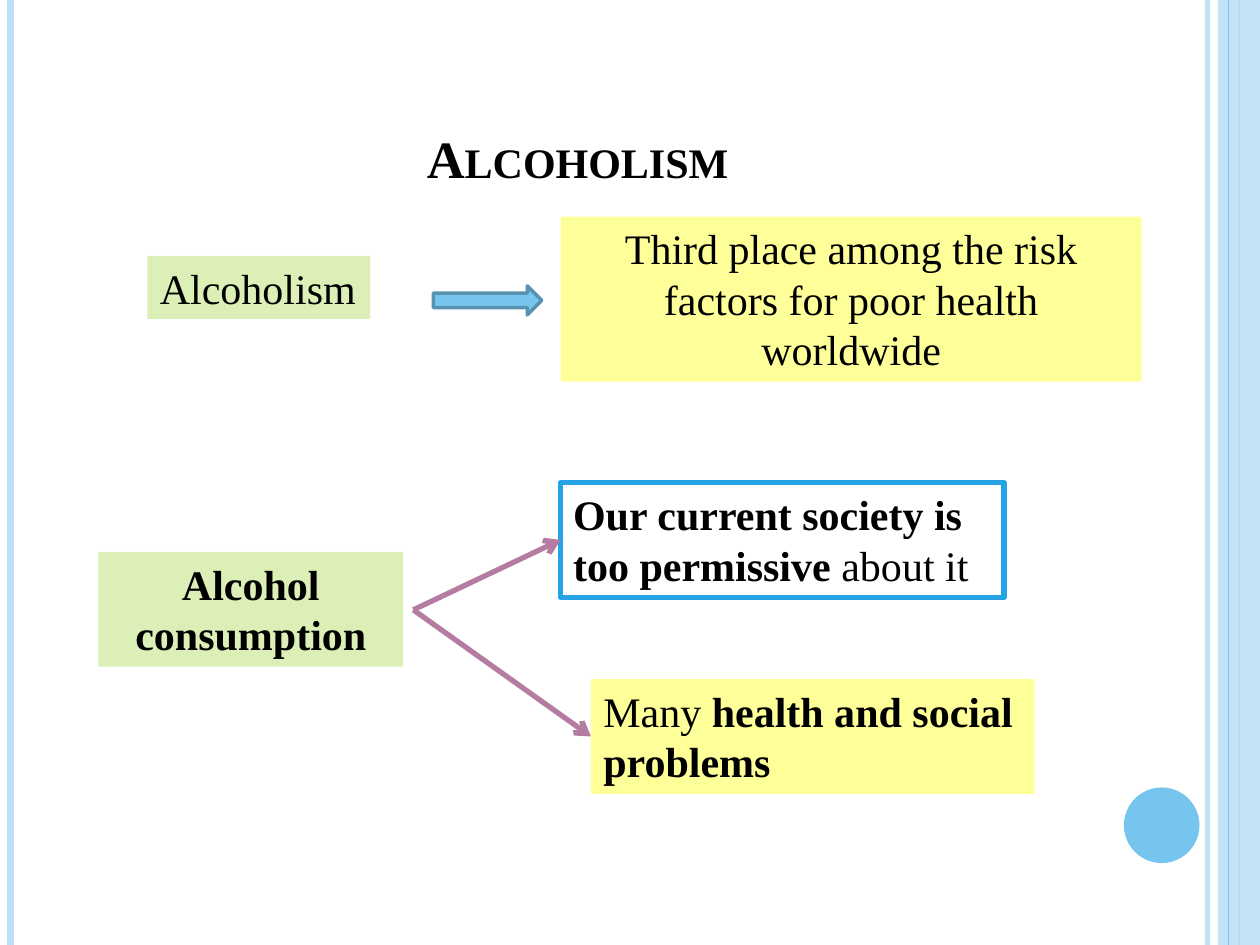
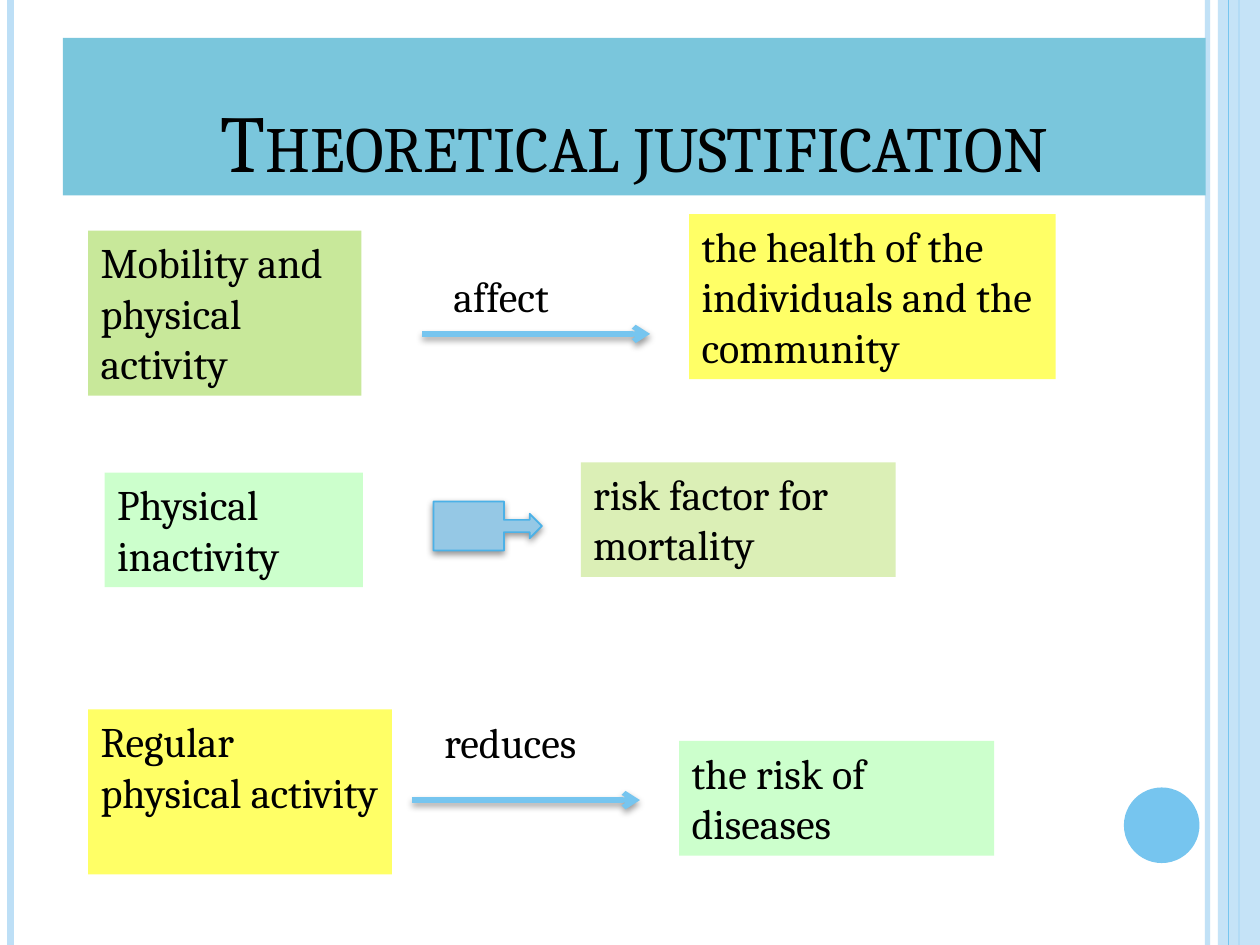
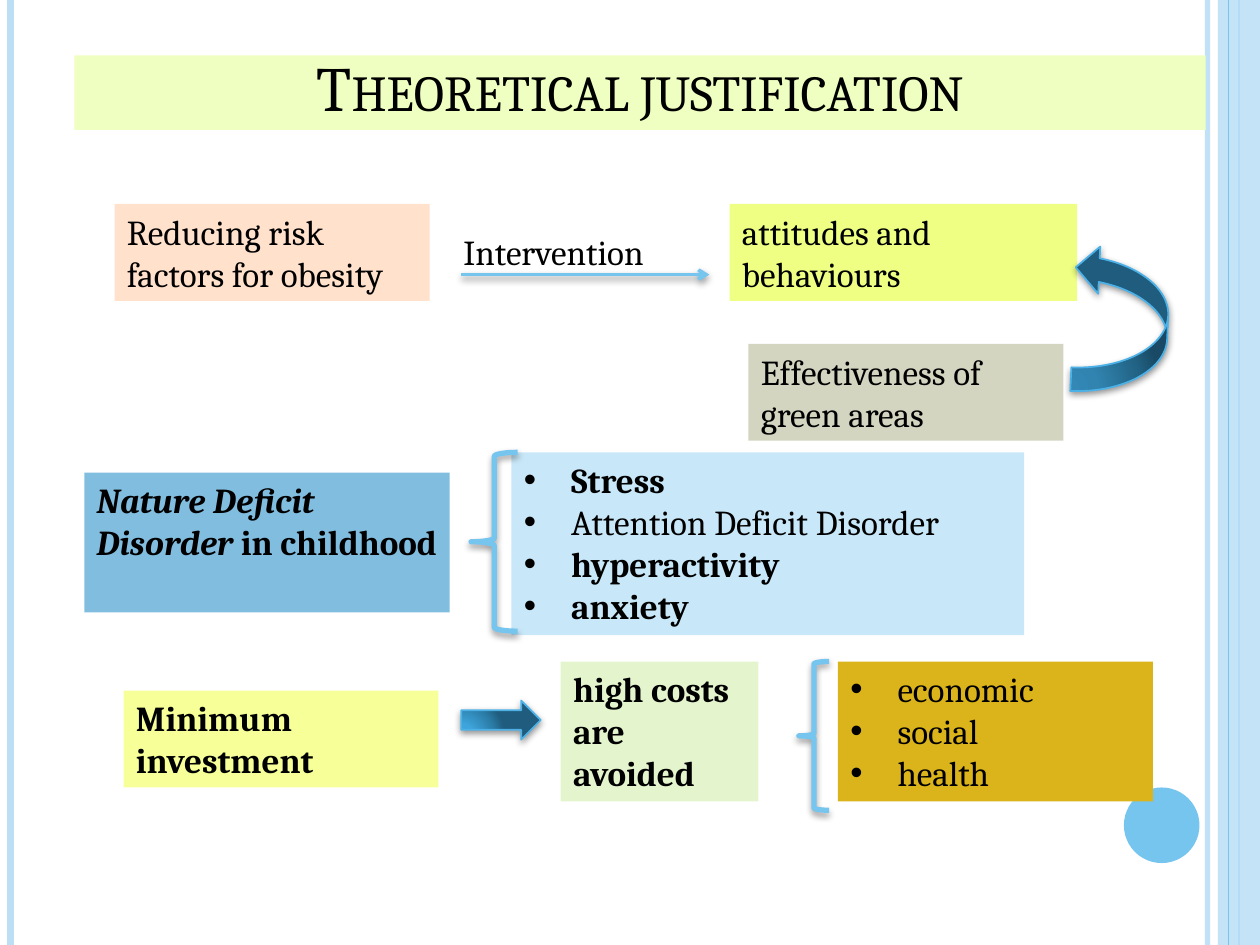
from dataclasses import dataclass

from lxml.etree import SubElement
from pptx import Presentation
from pptx.dml.color import RGBColor
from pptx.enum.shapes import MSO_CONNECTOR, MSO_SHAPE as Kind
from pptx.enum.text import MSO_ANCHOR as Anchor, PP_ALIGN as Align
from pptx.oxml import parse_xml
from pptx.oxml.ns import nsdecls, qn
from pptx.util import Pt

BLACK = RGBColor(0x00, 0x00, 0x00)
WHITE = RGBColor(0xFF, 0xFF, 0xFF)
PALE_BLUE = RGBColor(0xBD, 0xDF, 0xF6)
SKY = RGBColor(0x76, 0xC5, 0xEF)
STEEL = RGBColor(0x57, 0x92, 0xB1)
EDGE_BLUE = RGBColor(0x4B, 0xB1, 0xE7)
BRIGHT_BLUE = RGBColor(0x26, 0xA3, 0xE6)
CALLOUT_BLUE = RGBColor(0x95, 0xC8, 0xE5)
TITLE_BLUE = RGBColor(0x7A, 0xC6, 0xDC)
TITLE_LIME = RGBColor(0xEF, 0xFF, 0xC1)
NATURE_BLUE = RGBColor(0x80, 0xBD, 0xDF)
LIST_BLUE = RGBColor(0xC8, 0xE8, 0xF9)
MAUVE = RGBColor(0xB4, 0x7C, 0xA0)
SAGE = RGBColor(0xDB, 0xEF, 0xB6)
LEAF = RGBColor(0xC8, 0xE8, 0x9A)
MINT = RGBColor(0xCC, 0xFF, 0xCC)
PALE_GREEN = RGBColor(0xE4, 0xF4, 0xCD)
CREAM = RGBColor(0xFF, 0xFF, 0x99)
YELLOW = RGBColor(0xFF, 0xFF, 0x66)
LIME = RGBColor(0xEE, 0xFF, 0x83)
LEMON = RGBColor(0xF6, 0xFF, 0x98)
PEACH = RGBColor(0xFF, 0xE1, 0xCC)
STONE = RGBColor(0xD3, 0xD5, 0xC1)
GOLD = RGBColor(0xDB, 0xB3, 0x1B)
DEEP_BLUES = ((0, "40ABE4"), (30, "3EA5DC"), (75, "2B7DA8"), (100, "205C7D"))

PAGE_WIDTH, PAGE_HEIGHT = 720, 540
BULLET_INDENT = 27


@dataclass(frozen=True)
class Box:
    """A rectangle in points."""
    left: float
    top: float
    width: float
    height: float

    def inner(self, across, down, width, height):
        """Return a box placed from this one's top left corner."""
        return Box(self.left + across, self.top + down, width, height)

    def lengths(self):
        """Return the four lengths for python-pptx."""
        return [Pt(value) for value in (self.left, self.top, self.width, self.height)]


@dataclass(frozen=True)
class Face:
    """A font name with its size in points."""
    name: str
    size: float


TIMES_TITLE, TIMES_BODY = Face("Times New Roman", 30), Face("Times New Roman", 24)
CAMBRIA_TITLE, CAMBRIA_BAND = Face("Cambria", 46), Face("Cambria", 36)
CAMBRIA_BODY, CAMBRIA_SMALL = Face("Cambria", 24), Face("Cambria", 20)


def fade(shape, opacity):
    """Make every colour of a shape partly transparent."""
    for colour in shape.element.iter(qn("a:srgbClr")):
        SubElement(colour, qn("a:alpha")).set("val", str(opacity * 1000))


def cast_shadow(shape, opacity=40, distance=2):
    """Drop a soft black shadow below a shape."""
    effects = shape.element.spPr.find(qn("a:effectLst"))
    effects.append(parse_xml(
        f'<a:outerShdw {nsdecls("a")} blurRad="{Pt(4)}" dist="{Pt(distance)}" '
        f'dir="5400000" rotWithShape="0"><a:srgbClr val="000000">'
        f'<a:alpha val="{opacity * 1000}"/></a:srgbClr></a:outerShdw>'))


def shade_radially(shape):
    """Fill a shape with the deep blue radial gradient."""
    stops = "".join(f'<a:gs pos="{place * 1000}"><a:srgbClr val="{colour}"/></a:gs>'
                    for place, colour in DEEP_BLUES)
    shape.fill.gradient()
    properties = shape.element.spPr
    properties.replace(properties.find(qn("a:gradFill")), parse_xml(
        f'<a:gradFill {nsdecls("a")} rotWithShape="1"><a:gsLst>{stops}</a:gsLst>'
        '<a:path path="circle"><a:fillToRect l="5000" t="100000" r="120000" b="10000"/>'
        '</a:path></a:gradFill>'))


def add_figure(page, kind, box, fill=None, line=None, weight=1):
    """Add a preset shape with the given fill and outline."""
    shape = page.shapes.add_shape(kind, *box.lengths())
    shape.shadow.inherit = False
    if fill is None:
        shape.fill.background()
    else:
        shape.fill.solid()
        shape.fill.fore_color.rgb = fill
    if line is None:
        shape.line.fill.background()
    else:
        shape.line.color.rgb = line
        shape.line.width = Pt(weight)
    return shape


def add_line(page, start, end, colour, weight, arrow=False):
    """Add a straight line between two points, with an arrowhead if asked."""
    line = page.shapes.add_connector(
        MSO_CONNECTOR.STRAIGHT, *[Pt(value) for value in (*start, *end)])
    line.line.color.rgb = colour
    line.line.width = Pt(weight)
    properties = line.element.spPr
    SubElement(properties, qn("a:effectLst"))
    if arrow:
        SubElement(properties.find(qn("a:ln")), qn("a:tailEnd")).set("type", "arrow")
    return line


def format_span(span, face, bold=False, italic=False):
    """Give a run its font."""
    span.font.name, span.font.size = face.name, Pt(face.size)
    span.font.bold, span.font.italic = bold, italic
    span.font.color.rgb = BLACK


def add_span(para, text, face, bold=False):
    """Continue a paragraph with a run of another weight."""
    span = para.add_run()
    span.text = text
    format_span(span, face, bold)


def write(shape, text, face, align=Align.LEFT, anchor=Anchor.TOP,
          bold=False, italic=False, wrap=True):
    """Set a shape's text and return its paragraphs."""
    frame = shape.text_frame
    frame.text = text
    frame.word_wrap = wrap
    frame.vertical_anchor = anchor
    for para in frame.paragraphs:
        para.alignment = align
        for span in para.runs:
            format_span(span, face, bold, italic)
    return frame.paragraphs


def add_panel(page, box, fill, text, face, line=None, weight=3, **style):
    """Add a filled text panel and return its paragraphs."""
    shape = add_figure(page, Kind.RECTANGLE, box, fill, line, weight)
    return write(shape, text, face, **style)


def add_list(page, box, fill, items, face, bold=False):
    """Add a panel of bulleted items and return its paragraphs."""
    shape = add_figure(page, Kind.RECTANGLE, box, fill)
    paras = write(shape, "\n".join(items), face, bold=bold)
    for properties in shape.element.iter(qn("a:pPr")):
        properties.set("marL", str(Pt(BULLET_INDENT)))
        properties.set("indent", str(-Pt(BULLET_INDENT)))
        SubElement(properties, qn("a:buFont")).set("typeface", "Arial")
        SubElement(properties, qn("a:buChar")).set("char", "•")
    return paras


def add_title(page, box, text, face, fill=None, bold=False):
    """Add the small-caps title at the foot of its band."""
    shape = add_figure(page, Kind.RECTANGLE, box, fill)
    write(shape, text, face, Align.CENTER, Anchor.BOTTOM, bold)
    for properties in shape.element.iter(qn("a:rPr")):
        properties.set("cap", "small")


def add_labelled_arrow(page, box, label, indent, label_box, face, weight=3):
    """Add an arrow along the foot of a box with a label at its top."""
    foot = box.top + box.height
    cast_shadow(add_line(page, (box.left, foot), (box.left + box.width, foot),
                         SKY, weight, arrow=True))
    text_box = page.shapes.add_textbox(*box.inner(indent, 0, *label_box).lengths())
    write(text_box, label, face, wrap=False)


def add_glossy_arrow(page, kind, box, rotation=0):
    """Add a block arrow with the deep blue gradient and a shadow."""
    arrow = add_figure(page, kind, box, line=EDGE_BLUE)
    arrow.rotation = rotation
    shade_radially(arrow)
    cast_shadow(arrow, 42, 1.6)


def add_brace(page, box):
    """Add an opening brace."""
    cast_shadow(add_figure(page, Kind.LEFT_BRACE, box, line=SKY, weight=3))


def add_frame(page):
    """Draw the side stripes and the disc that all slides share."""
    def stripe(across, colour, weight):
        return add_line(page, (across, 0), (across, PAGE_HEIGHT), colour, weight)

    fade(stripe(690, PALE_BLUE, 3), 93)
    stripe(6, PALE_BLUE, 4.5)
    stripe(708, SKY, 1.5)
    fade(add_figure(page, Kind.RECTANGLE, Box(696, 0, 24, PAGE_HEIGHT), PALE_BLUE), 87)
    stripe(702, SKY, 0.75)
    add_figure(page, Kind.OVAL, Box(642.24, 450, 43.2, 43.2), SKY)


def add_risk_row(page, area):
    """Show alcoholism leading to its rank as a risk factor."""
    add_panel(page, area.inner(0, 22.4, 127.4, 36), SAGE, "Alcoholism", TIMES_BODY, wrap=False)
    add_panel(page, area.inner(236.1, 0, 332, 94.3), CREAM,
              "Third place among the risk factors for poor health worldwide",
              TIMES_BODY, align=Align.CENTER)
    add_figure(page, Kind.RIGHT_ARROW, area.inner(163.3, 39.6, 62, 16.6), SKY, STEEL, 2)


def add_consumption_fork(page, area):
    """Show alcohol consumption branching to attitude and problems."""
    height = 65.5
    add_panel(page, area.inner(0, 39.6, 174.2, height), SAGE, "Alcohol consumption",
              TIMES_BODY, align=Align.CENTER, bold=True)
    attitude = area.inner(264.2, 0, 253.4, height)
    problems = area.inner(281.5, 112.3, 253.4, height)
    paras = add_panel(page, attitude, WHITE, "Our current society is too permissive ",
                      TIMES_BODY, line=BRIGHT_BLUE, bold=True)
    add_span(paras[0], "about it", TIMES_BODY)
    paras = add_panel(page, problems, CREAM, "Many ", TIMES_BODY)
    add_span(paras[0], "health and social problems", TIMES_BODY, bold=True)
    for target in (attitude, problems):
        add_line(page, (area.left + 180, area.top + 72.7),
                 (target.left, target.top + height / 2), MAUVE, 3, arrow=True)


def add_mobility_row(page, area):
    """Show mobility affecting health."""
    add_panel(page, area.inner(0, 9.4, 156.2, 94.3), LEAF,
              "Mobility and physical activity", CAMBRIA_BODY)
    add_labelled_arrow(page, area.inner(190.8, 28.8, 130.3, 39.6), "affect", 10.8,
                       (73.4, 36), CAMBRIA_BODY)
    add_panel(page, area.inner(343.4, 0, 209.5, 94.3), YELLOW,
              "the health of the individuals and the community", CAMBRIA_BODY)


def add_inactivity_row(page, area):
    """Show inactivity as a risk factor."""
    add_panel(page, area.inner(0, 5.8, 147.6, 65.5), MINT, "Physical inactivity", CAMBRIA_BODY)
    add_panel(page, area.inner(272.1, 0, 180, 65.5), SAGE,
              "risk factor for mortality", CAMBRIA_BODY)
    cast_shadow(add_figure(page, Kind.RIGHT_ARROW_CALLOUT, area.inner(187.9, 22.4, 62, 28),
                           CALLOUT_BLUE, EDGE_BLUE), 42, 1.6)


def add_activity_row(page, area):
    """Show regular activity reducing disease."""
    add_panel(page, area.inner(0, 0, 173.5, 94.3), YELLOW,
              "Regular physical activity", CAMBRIA_BODY)
    add_panel(page, area.inner(337.7, 18, 180, 65.5), MINT, "the risk of diseases", CAMBRIA_BODY)
    add_labelled_arrow(page, area.inner(185, 0.7, 130.3, 51.1), "reduces", 11.5,
                       (100.8, 36), CAMBRIA_BODY)


def add_intervention_group(page, area):
    """Show the intervention on obesity and the role of green areas."""
    add_labelled_arrow(page, area.inner(198, 11.5, 141.8, 28.8), "Intervention", -5.8,
                       (130.3, 31.7), CAMBRIA_SMALL, weight=2)
    for across, down, width, fill, text in (
            (0, 0, 180, PEACH, "Reducing risk factors for obesity"),
            (351.4, 0, 198.7, LIME, "attitudes and behaviours"),
            (362.2, 79.9, 180, STONE, "Effectiveness of green areas")):
        add_panel(page, area.inner(across, down, width, 55.4), fill, text, CAMBRIA_SMALL)
    add_glossy_arrow(page, Kind.CURVED_UP_ARROW, area.inner(532.8, 38.9, 84.2, 54), 272.5)


def add_nature_group(page, area):
    """Show the childhood disorder with its effects."""
    paras = add_panel(page, area.inner(0, 11.5, 208.8, 79.9), NATURE_BLUE,
                      "Nature Deficit Disorder ", CAMBRIA_SMALL, bold=True, italic=True)
    add_span(paras[0], "in childhood", CAMBRIA_SMALL, bold=True)
    effects = add_list(page, area.inner(244.1, 0, 293, 104.4), LIST_BLUE,
                       ("Stress", "Attention Deficit Disorder", "hyperactivity", "anxiety"),
                       CAMBRIA_SMALL, bold=True)
    effects[1].runs[0].font.bold = False
    add_brace(page, area.inner(221, 0, 26.6, 102.2))


def add_investment_group(page, area):
    """Show a small investment avoiding three kinds of cost."""
    add_panel(page, area.inner(0, 16.6, 180, 55.4), LEMON, "Minimum investment",
              CAMBRIA_SMALL, bold=True)
    add_panel(page, area.inner(249.8, 0, 113, 79.9), PALE_GREEN, "high costs are avoided",
              CAMBRIA_SMALL, bold=True)
    add_list(page, area.inner(408.2, 0, 180, 79.9), GOLD,
             ("economic", "social", "health"), CAMBRIA_SMALL)
    add_brace(page, area.inner(385.9, 0, 17.3, 85))
    add_glossy_arrow(page, Kind.RIGHT_ARROW, area.inner(193, 22.3, 45.4, 22.3))


def build_alcoholism(page):
    """Build the slide on alcoholism."""
    add_title(page, Box(36, 21.6, 588.2, 90), "Alcoholism", TIMES_TITLE, bold=True)
    add_risk_row(page, Box(84.3, 123.8, 568.1, 94.3))
    add_consumption_fork(page, Box(56.2, 275.8, 534.9, 177.8))


def build_activity(page):
    """Build the slide on physical activity."""
    add_title(page, Box(36, 21.6, 653, 90), "Theoretical justification",
              CAMBRIA_TITLE, TITLE_BLUE)
    add_mobility_row(page, Box(50.4, 122.4, 552.9, 103.7))
    add_inactivity_row(page, Box(59.8, 264.2, 452.1, 71.3))
    add_activity_row(page, Box(50.4, 405.4, 517.7, 94.3))


def build_environment(page):
    """Build the slide on obesity, nature and investment."""
    add_title(page, Box(42.5, 31.7, 646.5, 42.5), "Theoretical justification",
              CAMBRIA_BAND, TITLE_LIME)
    add_intervention_group(page, Box(65.5, 116.6, 617, 135.3))
    add_nature_group(page, Box(48.2, 258.5, 537.1, 104.4))
    add_investment_group(page, Box(70.6, 378, 588.2, 85))


def main():
    """Build the deck and save it."""
    deck = Presentation()
    deck.slide_width, deck.slide_height = Pt(PAGE_WIDTH), Pt(PAGE_HEIGHT)
    for build in (build_alcoholism, build_activity, build_environment):
        page = deck.slides.add_slide(deck.slide_layouts[6])
        add_frame(page)
        build(page)
    deck.save("out.pptx")


if __name__ == "__main__":
    main()
